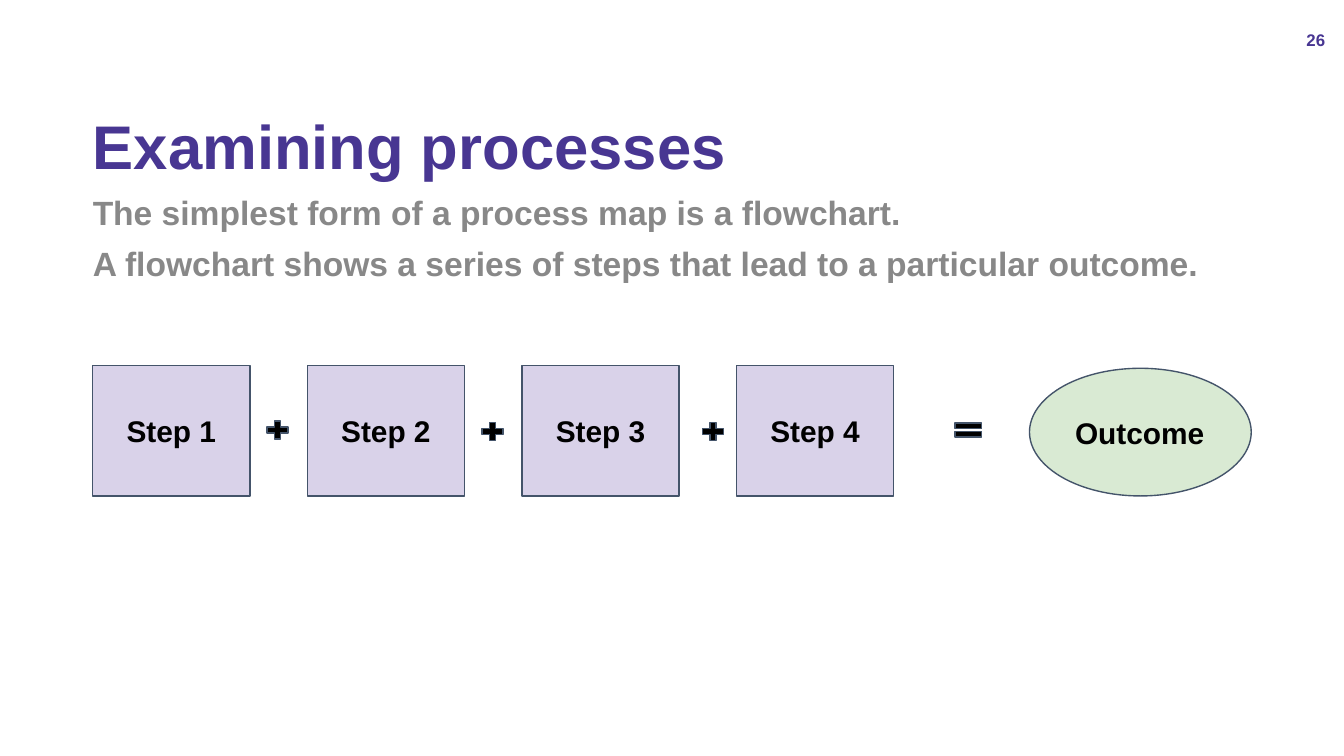
from dataclasses import dataclass
from pptx import Presentation
from pptx import util as u
from pptx.dml.color import RGBColor
from pptx.enum import shapes, text


@dataclass(frozen=True)
class Theme:
    face: str = "Arial"
    brand: str = "483692"
    grey: str = "888888"
    ink: str = "000000"
    edge: str = "44546A"
    lilac: str = "D9D2E9"
    mint: str = "D9EAD3"
    head: int = 33
    lead: int = 18
    label: int = 16
    small: int = 9


T = Theme()
KIND = shapes.MSO_SHAPE
ALIGN = text.PP_ALIGN
ANCHOR = text.MSO_ANCHOR

TITLE = "Examining processes"
LEAD = [
    "The simplest form of a process map is a flowchart.",
    "A flowchart shows a series of steps that lead to a particular outcome.",
]
STEPS = ["Step 1", "Step 2", "Step 3", "Step 4"]
OUTCOME = "Outcome"
PAGE = "26"

WIDE = 10
HIGH = WIDE * 9 / 16
LEFT, SPAN = 0.69, 8.62
TOP, LAST = 2.72, 5.48
PITCH = (LAST - LEFT) / (len(STEPS) - 1)
STEP_W, STEP_H = 1.17, 0.97
OVAL_W, OVAL_H = 1.65, 0.95
SIGN_H = 0.18
PLUS = {"kind": KIND.MATH_PLUS, "w": 0.21, "adj": [0.235]}
EQUAL = {"kind": KIND.MATH_EQUAL, "w": 0.27, "adj": [0.235, 0.118]}
SIGNS = [(1.96, 3.11, PLUS), (3.56, 3.12, PLUS), (5.2, 3.12, PLUS), (7.07, 3.11, EQUAL)]


def inches(*sizes):
    return [u.Inches(size) for size in sizes]


def write(frame, lines, size, color, inset, anchor, align=ALIGN.LEFT, **para):
    """Fill a text frame; inset is left, top, right, bottom in inches."""
    left, top, right, bottom = inches(*inset)
    look = {"word_wrap": True, "auto_size": text.MSO_AUTO_SIZE.NONE,
            "vertical_anchor": anchor, "margin_left": left, "margin_top": top,
            "margin_right": right, "margin_bottom": bottom}
    for key, value in look.items():
        setattr(frame, key, value)
    frame.text = "\n".join(lines)
    for item in frame.paragraphs:
        for key, value in {"alignment": align, **para}.items():
            setattr(item, key, value)
        font = item.runs[0].font
        for key, value in {"name": T.face, "size": u.Pt(size), "bold": True}.items():
            setattr(font, key, value)
        font.color.rgb = RGBColor.from_string(color)


def draw(slide, kind, box, fill, adj=()):
    shape = slide.shapes.add_shape(kind, *inches(*box))
    shape.shadow.inherit = False
    shape.fill.solid()
    shape.fill.fore_color.rgb = RGBColor.from_string(fill)
    shape.line.color.rgb = RGBColor.from_string(T.edge)
    shape.line.width = u.Pt(0.75)
    for i, value in enumerate(adj):
        shape.adjustments[i] = value
    return shape


def add_text(slide):
    title = slide.shapes.title
    title.left, title.top, title.width, title.height = inches(LEFT, 0.32, SPAN, 1.09)
    write(title.text_frame, [TITLE], T.head, T.brand, (0, 0.04, 0.07, 0.05),
          ANCHOR.BOTTOM, line_spacing=0.9)
    body = slide.shapes.add_textbox(*inches(LEFT, 1.42, SPAN, 3.57)).text_frame
    write(body, LEAD, T.lead, T.grey, (0, 0.04, 0.07, 0.04), ANCHOR.TOP, line_spacing=0.9)
    for item in body.paragraphs[1:]:
        item.space_before = u.Pt(8)
    page = slide.shapes.add_textbox(*inches(9.51, 0.15, 0.42, 0.3))
    write(page.text_frame, [PAGE], T.small, T.brand, (0.07, 0.04, 0.07, 0.04),
          ANCHOR.MIDDLE, ALIGN.RIGHT)


def add_flow(slide):
    nodes = [(KIND.RECTANGLE, (LEFT + i * PITCH, TOP, STEP_W, STEP_H), T.lilac, step, ALIGN.CENTER)
             for i, step in enumerate(STEPS)]
    oval = (LEFT + SPAN - OVAL_W, TOP + STEP_H - OVAL_H, OVAL_W, OVAL_H)
    nodes.append((KIND.OVAL, oval, T.mint, OUTCOME, ALIGN.LEFT))
    for kind, box, fill, label, align in nodes:
        shape = draw(slide, kind, box, fill)
        write(shape.text_frame, [label], T.label, T.ink, [0.1] * 4, ANCHOR.MIDDLE, align)
    for x, y, sign in SIGNS:
        draw(slide, sign["kind"], (x, y, sign["w"], SIGN_H), T.ink, sign["adj"])


def main():
    deck = Presentation()
    deck.slide_width, deck.slide_height = inches(WIDE, HIGH)
    slide = deck.slides.add_slide(deck.slide_layouts[5])
    add_text(slide)
    add_flow(slide)
    deck.save("out.pptx")


if __name__ == "__main__":
    main()
